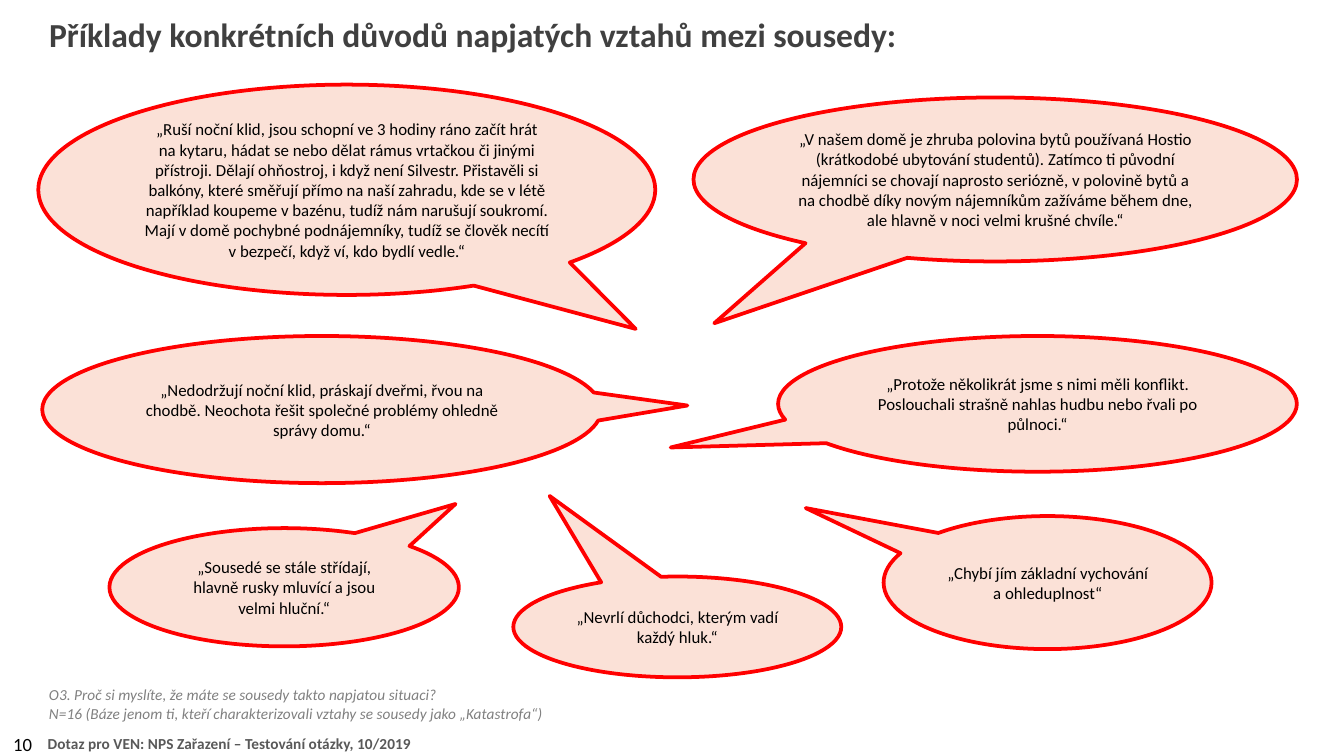
import pptx
import pptx.dml.color
import pptx.enum.shapes
import pptx.enum.text
import pptx.util

PX = 4572  # 200 px to the inch
FONT = "Calibri"
COLORS = {
    "bubble": "FBE1D7",
    "outline": "FF0000",
    "title": "404040",
    "footer": "595959",
    "note": "808080",
    "text": "000000",
}

TITLE = "Příklady konkrétních důvodů napjatých vztahů mezi sousedy:"
FOOTER = "Dotaz pro VEN: NPS Zařazení – Testování otázky, 10/2019"
QUESTION_NOTE = [
    "O3. Proč si myslíte, že máte se sousedy takto napjatou situaci?",
    "N=16 (Báze jenom ti, kteří charakterizovali vztahy se sousedy jako „Katastrofa“)",
]

# box, tail tip measured from the centre of the box, quotation
QUOTES = [
    ((57, 126, 918, 313), (430, 207),
     "„Ruší noční klid, jsou schopní ve 3 hodiny ráno začít hrát\n"
     "na kytaru, hádat se nebo dělat rámus vrtačkou či jinými přístroji. "
     "Dělají ohňostroj, i když není Silvestr. Přistavěli si balkóny, které "
     "směřují přímo na naší zahradu, kde se v létě například koupeme v bazénu, "
     "tudíž nám narušují soukromí. Mají v domě pochybné podnájemníky, tudíž se "
     "člověk necítí v bezpečí, když ví, kdo bydlí vedle.“"),
    ((163, 786, 520, 176), (255, -124),
     "„Sousedé se stále střídají, hlavně rusky mluvící a jsou velmi hluční.“"),
    ((63, 500, 832, 219), (544, -6),
     "„Nedodržují noční klid, práskají dveřmi, řvou na chodbě. Neochota řešit "
     "společné problémy ohledně správy domu.“"),
    ((1158, 500, 772, 202), (-546, 65),
     "„Protože několikrát jsme s nimi měli konflikt. Poslouchali strašně nahlas "
     "hudbu nebo řvali po půlnoci.“"),
    ((1032, 145, 898, 244), (-418, 214),
     "„V našem domě je zhruba polovina bytů používaná Hostio (krátkodobé "
     "ubytování studentů). Zatímco ti původní nájemníci se chovají naprosto "
     "seriózně, v polovině bytů a na chodbě díky novým nájemníkům zažíváme "
     "během dne, ale hlavně v noci velmi krušné chvíle.“"),
    ((764, 858, 488, 150), (-190, -195),
     "„Nevrlí důchodci, kterým vadí každý hluk.“"),
    ((1315, 768, 488, 198), (-360, -111),
     "„Chybí jím základní vychování a ohleduplnost“"),
]


def px(*lengths):
    return [pptx.util.Emu(length * PX) for length in lengths]


def rgb(name):
    return pptx.dml.color.RGBColor.from_string(COLORS[name])


def write(frame, lines, color, size, align=None, **font_format):
    """Fill a text frame with one paragraph for each line."""
    frame.word_wrap = True
    values = {"name": FONT, "size": pptx.util.Pt(size), **font_format}
    for index, line in enumerate(lines):
        paragraph = frame.add_paragraph() if index else frame.paragraphs[0]
        paragraph.text = line
        paragraph.alignment = align
        for run in paragraph.runs:
            for key, value in values.items():
                setattr(run.font, key, value)
            run.font.color.rgb = rgb(color)


def add_label(slide, box, lines, color, size, insets=(20, 10, 20, 10), **font_format):
    frame = slide.shapes.add_textbox(*px(*box)).text_frame
    sides = ("margin_left", "margin_top", "margin_right", "margin_bottom")
    for side, inset in zip(sides, px(*insets)):
        setattr(frame, side, inset)
    write(frame, lines, color, size, **font_format)


def add_quote(slide, box, tail, quotation):
    bubble = slide.shapes.add_shape(
        pptx.enum.shapes.MSO_SHAPE.OVAL_CALLOUT, *px(*box))
    for index, (offset, length) in enumerate(zip(tail, box[2:])):
        bubble.adjustments[index] = offset / length
    bubble.shadow.inherit = False
    bubble.fill.solid()
    bubble.fill.fore_color.rgb = rgb("bubble")
    bubble.line.color.rgb = rgb("outline")
    bubble.line.width = pptx.util.Pt(2)
    bubble.text_frame.vertical_anchor = pptx.enum.text.MSO_ANCHOR.MIDDLE
    write(bubble.text_frame, [quotation], "text", 9,
          align=pptx.enum.text.PP_ALIGN.CENTER)


def main():
    deck = pptx.Presentation()
    deck.slide_width, deck.slide_height = px(2000, 1125)
    slide = deck.slides.add_slide(deck.slide_layouts[6])

    add_label(slide, (66, 11, 1918, 102), [TITLE], "title", 18,
              insets=(7, 10, 7, 10), bold=True)
    add_label(slide, (57, 1086, 844, 50), [FOOTER], "footer", 8.25,
              insets=(14, 7, 14, 7), bold=True)
    for box, tail, quotation in QUOTES:
        add_quote(slide, box, tail, quotation)
    add_label(slide, (0, 1080, 466, 42), ["10"], "text", 10)
    add_label(slide, (66, 1020, 1828, 64), QUESTION_NOTE, "note", 8.25,
              insets=(7, 0, 7, 7), italic=True)

    deck.save("out.pptx")


if __name__ == "__main__":
    main()
